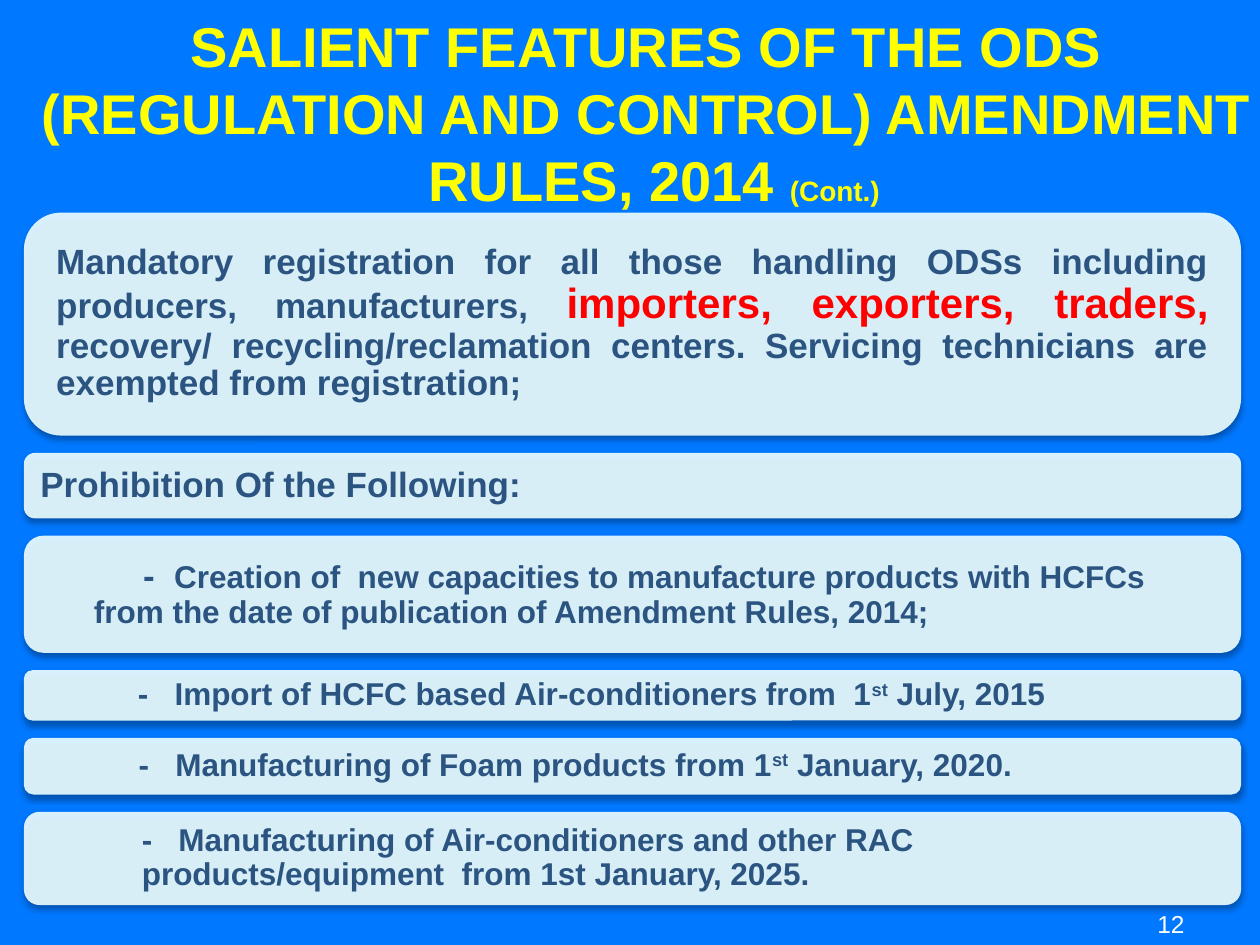
from lxml.etree import SubElement as Sub
from pptx import Presentation
from pptx.dml.color import RGBColor as RGB
from pptx.enum.shapes import MSO_SHAPE as Shape
from pptx.enum.text import MSO_ANCHOR as Anchor, MSO_AUTO_SIZE as Fit, PP_ALIGN as Align
from pptx.oxml.ns import qn
from pptx.util import Inches, Pt

BLUE = RGB(0x00, 0x78, 0xFF)
YELLOW = RGB(0xFF, 0xFF, 0x00)
WHITE = RGB(0xFF, 0xFF, 0xFF)
PALE = RGB(0xEF, 0xFF, 0xFF)
NAVY = RGB(0x2B, 0x54, 0x81)
RED = RGB(0xFF, 0x00, 0x00)

deck = Presentation()
deck.slide_width = Inches(10)
deck.slide_height = Inches(7.5)
col = deck.slide_width / 100
row = deck.slide_height / 100
slide = deck.slides.add_slide(deck.slide_layouts[5])
slide.background.fill.solid()
slide.background.fill.fore_color.rgb = BLUE


def place(item, left, top, width, height):
    item.left, item.width = int(left * col), int(width * col)
    item.top, item.height = int(top * row), int(height * row)


def write(para, text, size, color, bold=True, base=0):
    run = para.add_run()
    run.text = text
    font = run.font
    font.name, font.size, font.bold = "Arial", Pt(size), bold
    font.color.rgb = color
    if base:
        run._r.get_or_add_rPr().set("baseline", str(base * 1000))


title = slide.shapes.title
place(title, 1.7, 4.27, 99.2, 18.93)
frame = title.text_frame
frame.word_wrap = True
frame.auto_size = Fit.NONE
frame.vertical_anchor = Anchor.BOTTOM
head = frame.paragraphs[0]
head.alignment = Align.CENTER
write(head, "SALIENT FEATURES OF THE ODS (REGULATION AND CONTROL) AMENDMENT  RULES, 2014 ", 32, YELLOW)
write(head, "(Cont.)", 16, YELLOW)

cards = [
    (23.6, 1.7, 0, 0, Align.JUSTIFY, [
        ("Mandatory registration for all those handling ODSs including producers, manufacturers, ", 20, NAVY, 0),
        ("importers, exporters, traders,", 24, RED, 0),
        (" recovery/ recycling/reclamation centers. Servicing technicians are exempted from registration;", 20, NAVY, 0)]),
    (6.93, 1.05, 0, 0, Align.LEFT, [
        ("Prohibition Of the Following:", 20, NAVY, 0)]),
    (12.4, 1.2, 3.9, 3.9, Align.LEFT, [
        ("-  ", 20, NAVY, 0),
        ("Creation of  new capacities to manufacture products with HCFCs from the date of publication of Amendment Rules, 2014;", 18, NAVY, 0)]),
    (5.33, 0.95, 7.9, 0, Align.LEFT, [
        ("-   Import of HCFC based Air-conditioners from  1", 18, NAVY, 0),
        ("st", 18, NAVY, 30),
        (" July, 2015", 18, NAVY, 0)]),
    (6, 1, 7.9, 0, Align.LEFT, [
        ("-   Manufacturing of Foam products from 1", 18, NAVY, 0),
        ("st", 18, NAVY, 30),
        (" January, 2020.", 18, NAVY, 0)]),
    (9.87, 1.1, 7.9, 0, Align.LEFT, [
        ("-   Manufacturing of Air-conditioners and other RAC products/equipment  from 1st January, 2025.", 18, NAVY, 0)]),
]
top, gap = 22.5, 1.83

for height, inset, margin, indent, align, parts in cards:
    card = slide.shapes.add_shape(Shape.ROUNDED_RECTANGLE, 0, 0, 0, 0)
    place(card, 1.9, top, 96.6, height)
    top += height + gap
    card.line.fill.background()
    card.fill.solid()
    card.fill.fore_color.rgb = PALE
    tint = card._element.spPr.find(".//" + qn("a:srgbClr"))
    Sub(tint, qn("a:alpha"), val="90000")
    card.shadow.inherit = False
    glow = card._element.spPr.find(qn("a:effectLst"))
    shade = Sub(glow, qn("a:outerShdw"), blurRad=str(Pt(3.5)), dist=str(Pt(2.2)),
                dir="5400000", rotWithShape="0")
    black = Sub(shade, qn("a:srgbClr"), val="000000")
    Sub(black, qn("a:alpha"), val="32000")

    frame = card.text_frame
    frame.word_wrap = True
    frame.vertical_anchor = Anchor.MIDDLE
    frame.margin_left = frame.margin_right = int(inset * col)
    frame.margin_top = frame.margin_bottom = Inches(0.04)
    para = frame.paragraphs[0]
    para.alignment = align
    para.line_spacing = 0.9
    props = para._p.get_or_add_pPr()
    props.set("marL", str(int(margin * col)))
    props.set("indent", str(int(indent * col)))
    for text, size, color, base in parts:
        write(para, text, size, color, base=base)

page = slide.shapes.add_textbox(0, 0, 0, 0)
place(page, 71.7, 93.07, 23.3, 6.93)
page.text_frame.word_wrap = True
page.text_frame.vertical_anchor = Anchor.BOTTOM
para = page.text_frame.paragraphs[0]
para.alignment = Align.RIGHT
write(para, "12", 14, WHITE, bold=False)

deck.save("out.pptx")
